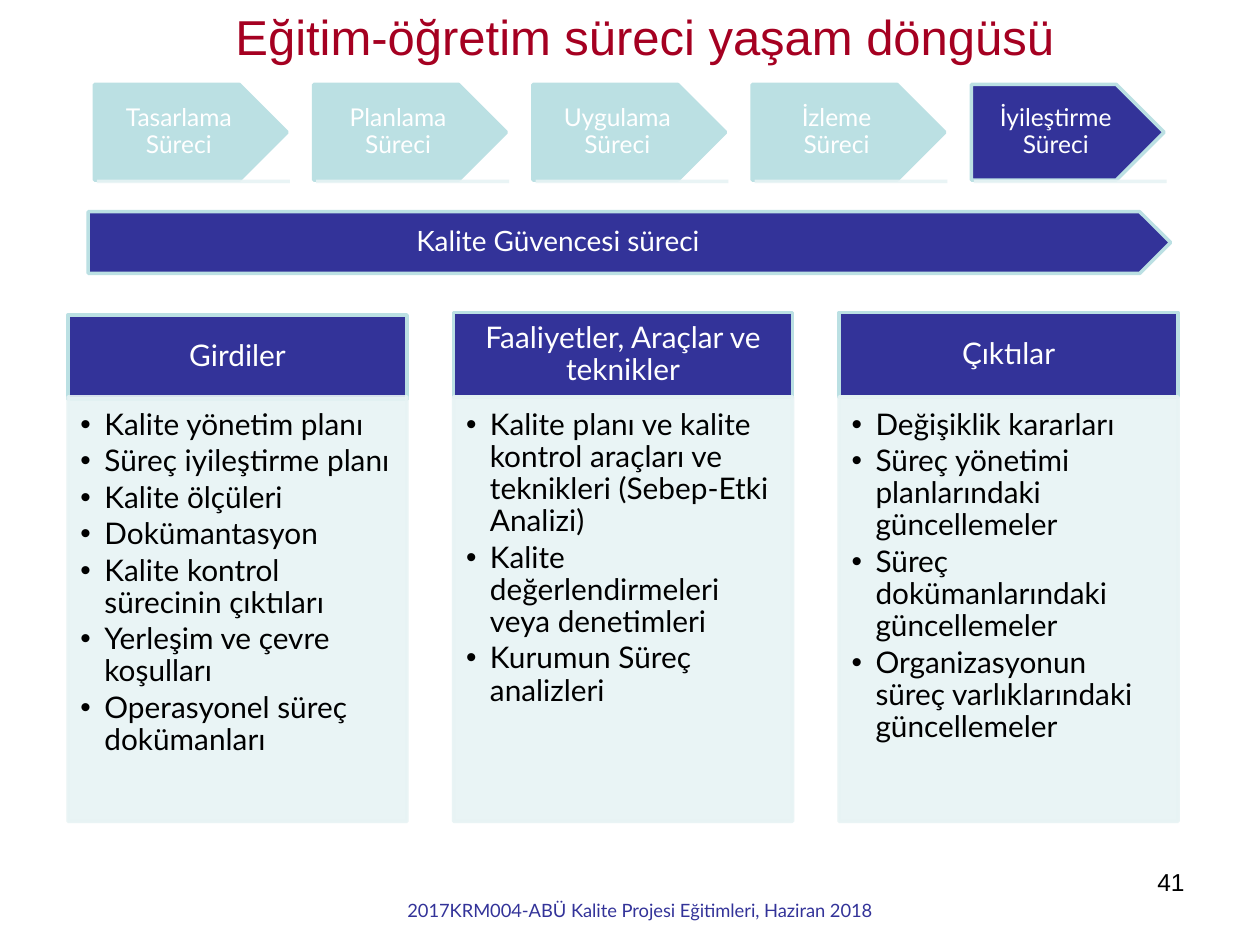
from dataclasses import dataclass

from pptx import Presentation
from pptx.dml.color import RGBColor
from pptx.enum.shapes import MSO_CONNECTOR as Connector, MSO_SHAPE as Preset
from pptx.enum.text import MSO_ANCHOR as Anchor, PP_ALIGN as Align
from pptx.oxml.ns import qn
from pptx.util import Inches, Pt
from lxml.etree import SubElement


@dataclass(frozen=True)
class Theme:
    heading_font: str = "Arial"
    body_font: str = "Lato"
    navy: str = "333399"
    aqua: str = "BBE0E3"
    pale: str = "E7F3F4"
    white: str = "FFFFFF"
    black: str = "000000"
    crimson: str = "A50021"
    title_size: float = 28
    card_size: float = 17
    bar_size: float = 16
    step_size: float = 14
    footer_size: float = 10.5
    line_width: float = 2
    opacity: int = 90


def apply(target, values):
    for name, value in values.items():
        setattr(target, name, value)


class SlideBuilder:
    def __init__(self, slide, theme):
        self.slide = slide
        self.theme = theme

    def paint(self, color_format, color, opacity=100):
        color_format.rgb = RGBColor.from_string(color)
        if opacity < 100:
            SubElement(color_format._color._xClr, qn("a:alpha"), val=str(opacity * 1000))

    def fill_text(self, shape, paragraphs, size, color, font=None, align=Align.CENTER,
                  anchor=Anchor.MIDDLE, insets=(0.1, 0.05, 0.1, 0.05), wrap=True,
                  bullets=False, spacing=1.0):
        frame = shape.text_frame
        left, top, right, bottom = map(Inches, insets)
        apply(frame, dict(word_wrap=wrap, vertical_anchor=anchor, margin_left=left,
                          margin_top=top, margin_right=right, margin_bottom=bottom))
        for index, text in enumerate(paragraphs):
            paragraph = frame.add_paragraph() if index else frame.paragraphs[0]
            apply(paragraph, dict(alignment=align, line_spacing=spacing))
            run = paragraph.add_run()
            run.text = text
            apply(run.font, dict(name=font or self.theme.body_font, size=Pt(size)))
            self.paint(run.font.color, color)
            if bullets:
                paragraph.space_after = Pt(2.5)
                properties = paragraph._p.get_or_add_pPr()
                properties.set("marL", str(Inches(0.19)))
                properties.set("indent", str(-Inches(0.19)))
                SubElement(properties, qn("a:buFont"), typeface="Arial")
                SubElement(properties, qn("a:buChar"), char="•")

    def text(self, box, content, size, color, **options):
        shape = self.slide.shapes.add_textbox(*map(Inches, box))
        self.fill_text(shape, [content], size, color, anchor=Anchor.TOP, **options)

    def block(self, preset, box, fill, outline, opacity=100):
        shape = self.slide.shapes.add_shape(preset, *map(Inches, box))
        shape.shadow.inherit = False
        shape.fill.solid()
        self.paint(shape.fill.fore_color, fill, opacity)
        shape.line.width = Pt(self.theme.line_width)
        self.paint(shape.line.color, outline, opacity)
        return shape

    def arrow(self, box, content, size, fill, right_inset=0.11):
        shape = self.block(Preset.PENTAGON, box, fill, self.theme.aqua)
        self.fill_text(shape, [content], size, self.theme.white,
                       insets=(0.11, 0.06, right_inset, 0.06), spacing=0.9)

    def rule(self, left, top, width):
        line = self.slide.shapes.add_connector(
            Connector.STRAIGHT, *map(Inches, (left, top, left + width, top)))
        line.line.width = Pt(self.theme.line_width)
        self.paint(line.line.color, self.theme.pale, self.theme.opacity)
        SubElement(line._element.spPr, qn("a:effectLst"))

    def card(self, left, header_top, heading, items):
        theme = self.theme
        width, body_top = 2.69, 3.15
        header = self.block(Preset.RECTANGLE, (left, header_top, width, 0.67),
                            theme.navy, theme.aqua)
        self.fill_text(header, [heading], theme.card_size, theme.white,
                       insets=(0.13, 0.08, 0.13, 0.08), spacing=0.9)
        body = self.block(Preset.RECTANGLE, (left, body_top, width, 3.37),
                          theme.pale, theme.pale, theme.opacity)
        self.fill_text(body, items, theme.card_size, theme.black, align=Align.LEFT,
                       anchor=Anchor.TOP, insets=(0.1, 0.1, 0.13, 0.15),
                       bullets=True, spacing=0.9)


STEPS = ["Tasarlama Süreci", "Planlama Süreci", "Uygulama Süreci", "İzleme Süreci",
         "İyileştirme Süreci"]

# Header top, heading, bullet items
CARDS = [
    (2.5, "Girdiler", [
        "Kalite yönetim planı", "Süreç iyileştirme planı", "Kalite ölçüleri",
        "Dokümantasyon", "Kalite kontrol sürecinin çıktıları",
        "Yerleşim ve çevre koşulları", "Operasyonel süreç dokümanları"]),
    (2.48, "Faaliyetler, Araçlar ve teknikler", [
        "Kalite planı ve kalite kontrol araçları ve teknikleri (Sebep-Etki Analizi)",
        "Kalite değerlendirmeleri veya denetimleri", "Kurumun Süreç analizleri"]),
    (2.48, "Çıktılar", [
        "Değişiklik kararları", "Süreç yönetimi planlarındaki güncellemeler",
        "Süreç dokümanlarındaki güncellemeler",
        "Organizasyonun süreç varlıklarındaki güncellemeler"]),
]


def main():
    presentation = Presentation()
    apply(presentation, dict(slide_width=Inches(10), slide_height=Inches(7.5)))
    theme = Theme()
    builder = SlideBuilder(
        presentation.slides.add_slide(presentation.slide_layouts[6]), theme)

    # Slide number
    builder.text((7.17, 6.83, 2.33, 0.52), "41", theme.step_size, theme.black,
                 font=theme.heading_font, align=Align.RIGHT)

    # Process steps, the last one highlighted
    for index, step in enumerate(STEPS):
        left = 0.75 + index * 1.74
        fill = theme.navy if step == STEPS[-1] else theme.aqua
        builder.arrow((left, 0.67, 1.53, 0.76), step, theme.step_size, fill)
        builder.rule(left + 0.02, 1.44, 1.53)

    # Inputs, activities and outputs
    for index, (header_top, heading, items) in enumerate(CARDS):
        builder.card(0.54 + index * 3.06, header_top, heading, items)

    # Quality assurance bar
    builder.arrow((0.7, 1.68, 8.59, 0.49), "Kalite Güvencesi süreci",
                  theme.bar_size, theme.navy, right_inset=1.12)

    # Footer and title
    builder.text((2.87, 7.09, 4.42, 0.31),
                 "2017KRM004-ABÜ Kalite Projesi Eğitimleri, Haziran 2018",
                 theme.footer_size, theme.navy)
    builder.text((1.77, 0, 6.89, 0.57), "Eğitim-öğretim süreci yaşam döngüsü",
                 theme.title_size, theme.crimson, font=theme.heading_font,
                 align=Align.LEFT, wrap=False)

    presentation.save("out.pptx")


if __name__ == "__main__":
    main()
